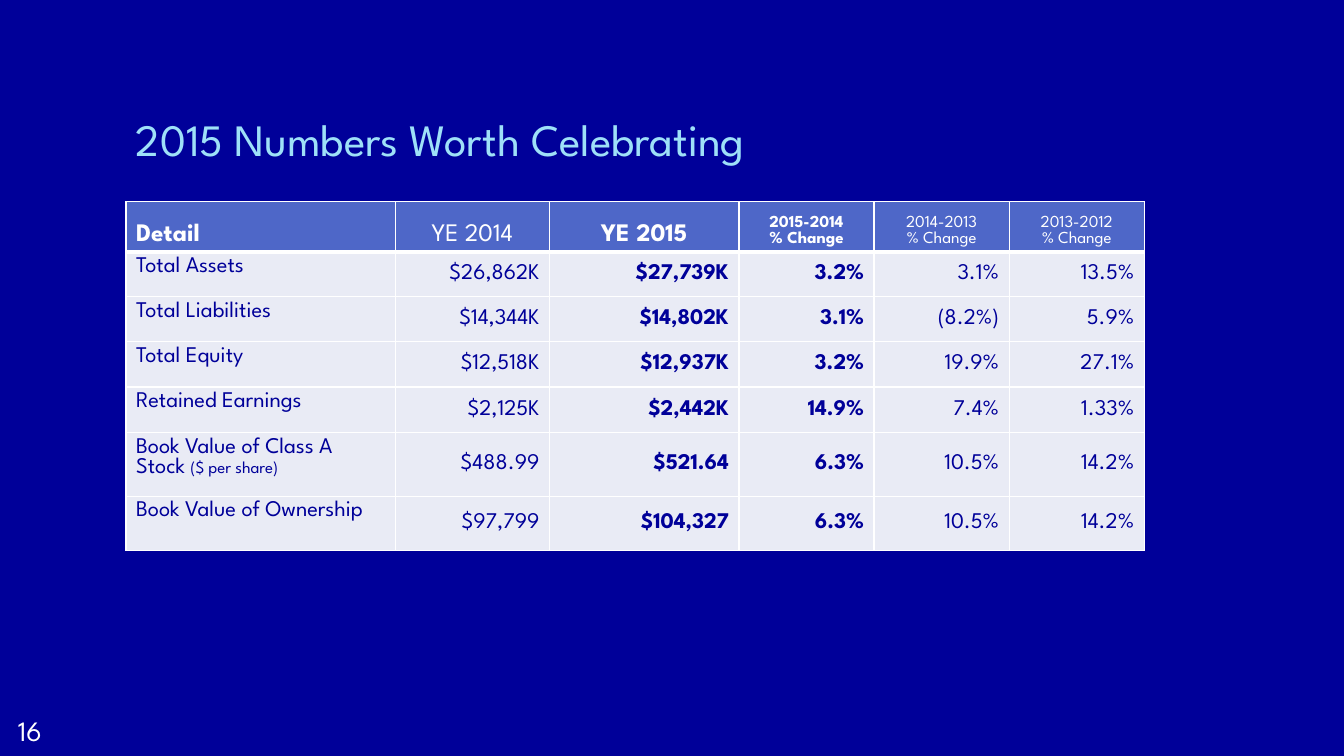
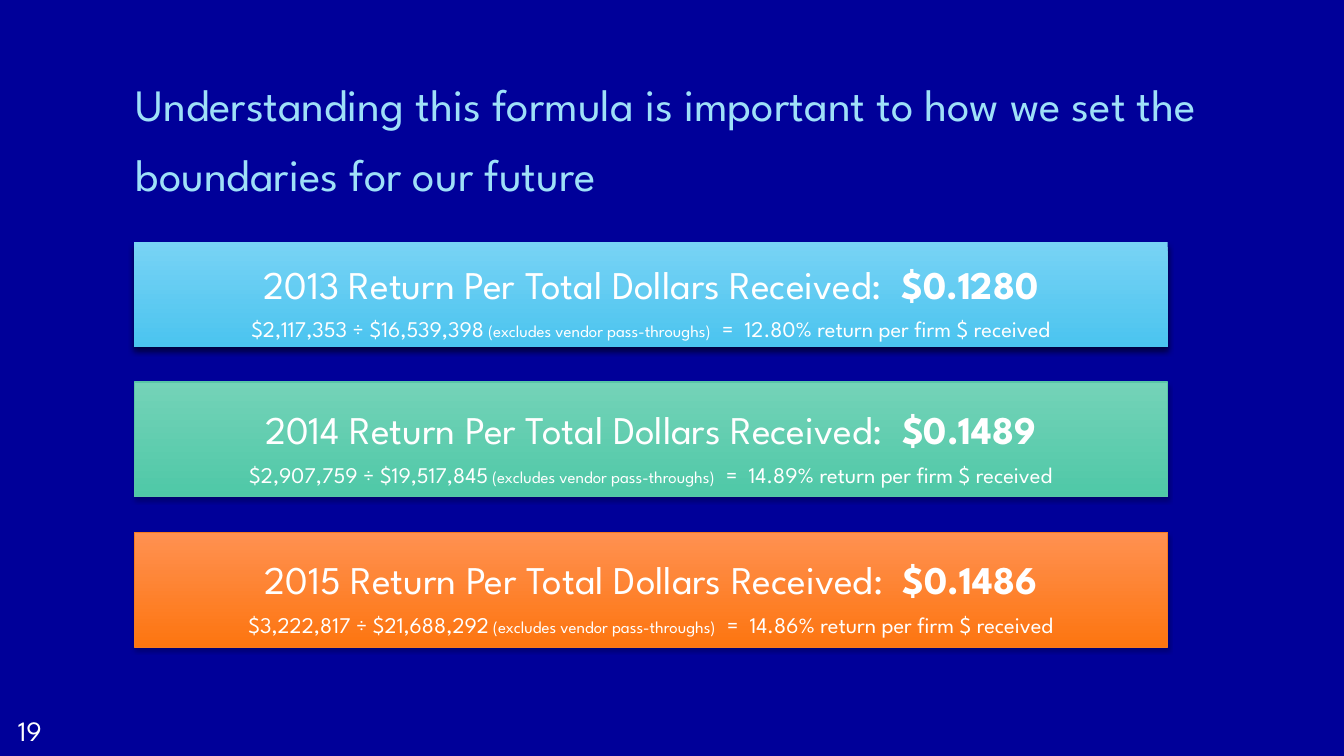
import pptx
import pptx.dml.color
import pptx.enum.shapes
import pptx.enum.text
import pptx.oxml
import pptx.oxml.ns
import pptx.util
from pptx.util import Inches

FONT = "League Spartan"
COLORS = {
    "background": "000099",
    "title": "9EE0F8",
    "number": "FEFFFF",
    "white": "FFFFFF",
    "header": "4E67C8",
    "body": "E9EBF5",
    "ink": "000099",
}
ALIGN = pptx.enum.text.PP_ALIGN
ANCHOR = pptx.enum.text.MSO_ANCHOR
LINE_SPACING = 1.3

TABLE_BOX = (1.25, 2, 10.08, 3.55)
COLUMN_WIDTHS = [2.67, 1.53, 1.88, 1.34, 1.34, 1.34]
ROW_HEIGHTS = [0.48, 0.44, 0.45, 0.45, 0.45, 0.61, 0.54]
BOLD_COLUMNS = {2, 3}
HEADERS = [
    (["Detail"], 18), (["YE 2014"], 18), (["YE 2015"], 18),
    (["2015-2014", "% Change"], 12),
    (["2014-2013", "% Change"], 12),
    (["2013-2012", "% Change"], 12),
]
RESULTS = [
    ["Total Assets", "$26,862K", "$27,739K", "3.2%", "3.1%", "13.5%"],
    ["Total Liabilities", "$14,344K", "$14,802K", "3.1%", "(8.2%)", "5.9%"],
    ["Total Equity", "$12,518K", "$12,937K", "3.2%", "19.9%", "27.1%"],
    ["Retained Earnings", "$2,125K", "$2,442K", "14.9%", "7.4%", "1.33%"],
    ["Book Value of Class A Stock ", "$488.99", "$521.64", "6.3%", "10.5%", "14.2%"],
    ["Book Value of Ownership", "$97,799", "$104,327", "6.3%", "10.5%", "14.2%"],
]
CELL_NOTES = {"Book Value of Class A Stock ": "($ per share)"}

BANDS_BOX = (1.33, 2.4, 10.25)
BAND_GAP = 0.35
SOFT_SHADOW = {"opacity": 25, "blur": 3, "distance": 2}
BANDS = [
    {"year": "2013", "height": 1.04, "amount": "$0.1280", "rate": "12.80%",
     "division": "$2,117,353 ÷ $16,539,398", "gradient": ("78D3F5", "4BC4EF"),
     "outline": None, "shadow": {"opacity": 60, "blur": 4, "distance": 3}},
    {"year": "2014", "height": 1.14, "amount": "$0.1489", "rate": "14.89%",
     "division": "$2,907,759 ÷ $19,517,845", "gradient": ("74D3B8", "4FC8A7"),
     "outline": "59C5A7", "shadow": SOFT_SHADOW},
    {"year": "2015", "height": 1.14, "amount": "$0.1486", "rate": "14.86%",
     "division": "$3,222,817 ÷ $21,688,292", "gradient": ("FF9151", "FD7510"),
     "outline": "F47A20", "shadow": SOFT_SHADOW},
]


def rgb(value):
    return pptx.dml.color.RGBColor.from_string(value)


def set_attributes(target, values):
    for name, value in values.items():
        setattr(target, name, value)


def add_span(para, text, size, color, bold=False):
    span = para.add_run()
    span.text = text
    set_attributes(span.font, {"name": FONT, "size": pptx.util.Pt(size), "bold": bold})
    span.font.color.rgb = rgb(COLORS[color])
    return span


def add_wide_space(para, size):
    """Add one space, tracked out to the width of two."""
    span = add_span(para, " ", size, "white")
    span.font._element.set("spc", str(size * 25))


def add_text(page, box, text, size, color):
    frame = page.shapes.add_textbox(*map(Inches, box)).text_frame
    set_attributes(frame, {"word_wrap": True, "vertical_anchor": ANCHOR.MIDDLE})
    para = frame.paragraphs[0]
    para.line_spacing = LINE_SPACING
    add_span(para, text, size, color)


def add_page(deck, title, number):
    page = deck.slides.add_slide(deck.slide_layouts[6])
    page.background.fill.solid()
    page.background.fill.fore_color.rgb = rgb(COLORS["background"])
    add_text(page, (1.25, 0.68, 11.34, 1.23), title, 32, "title")
    add_text(page, (0.08, 7, 0.85, 0.4), number, 20, "number")
    return page


def style_cell(cell, fill, anchor, top=1, bottom=1):
    """Set the anchor, the white borders (widths in points) and the fill."""
    cell.vertical_anchor = anchor
    properties = cell._tc.get_or_add_tcPr()
    for side, width in {"L": 1, "R": 1, "T": top, "B": bottom}.items():
        properties.append(pptx.oxml.parse_xml(
            f'<a:ln{side} {pptx.oxml.ns.nsdecls("a")} w="{pptx.util.Pt(width)}">'
            f'<a:solidFill><a:srgbClr val="{COLORS["white"]}"/></a:solidFill>'
            f'</a:ln{side}>'))
    cell.fill.solid()
    cell.fill.fore_color.rgb = rgb(COLORS[fill])


def fill_header_cell(cell, column, lines, size):
    style_cell(cell, "header", ANCHOR.BOTTOM, bottom=3)
    para = cell.text_frame.paragraphs[0]
    para.alignment = ALIGN.CENTER if column else ALIGN.LEFT
    for index, line in enumerate(lines):
        if index:
            para.add_line_break()
        add_span(para, line, size, "white", column == 0 or column in BOLD_COLUMNS)


def fill_result_cell(cell, row, column, text):
    style_cell(cell, "body", ANCHOR.MIDDLE if column else ANCHOR.TOP,
               top=3 if row == 1 else 1)
    para = cell.text_frame.paragraphs[0]
    para.alignment = ALIGN.RIGHT if column else ALIGN.LEFT
    add_span(para, text, 16, "ink", column in BOLD_COLUMNS)
    if text in CELL_NOTES:
        add_span(para, CELL_NOTES[text], 12, "ink")


def add_results_table(page, box):
    table = page.shapes.add_table(
        len(ROW_HEIGHTS), len(COLUMN_WIDTHS), *map(Inches, box)).table
    for column, width in zip(table.columns, COLUMN_WIDTHS):
        column.width = Inches(width)
    for row, height in zip(table.rows, ROW_HEIGHTS):
        row.height = Inches(height)
    for column, (lines, size) in enumerate(HEADERS):
        fill_header_cell(table.cell(0, column), column, lines, size)
    for row, values in enumerate(RESULTS, 1):
        for column, text in enumerate(values):
            fill_result_cell(table.cell(row, column), row, column, text)


def add_shadow(shape, opacity, blur, distance):
    """Cast a black shadow straight down; lengths are in points."""
    shape.shadow.inherit = False
    effects = shape._element.spPr.find(pptx.oxml.ns.qn("a:effectLst"))
    effects.append(pptx.oxml.parse_xml(
        f'<a:outerShdw {pptx.oxml.ns.nsdecls("a")} blurRad="{pptx.util.Pt(blur)}" '
        f'dist="{pptx.util.Pt(distance)}" dir="5400000" rotWithShape="0">'
        f'<a:srgbClr val="000000"><a:alpha val="{opacity * 1000}"/></a:srgbClr>'
        '</a:outerShdw>'))


def add_band(page, box, band):
    shape = page.shapes.add_shape(
        pptx.enum.shapes.MSO_SHAPE.RECTANGLE, *map(Inches, box))
    shape.fill.gradient()
    shape.fill.gradient_angle = 270
    for stop, position, color in zip(shape.fill.gradient_stops, (0, 1), band["gradient"]):
        stop.position = position
        stop.color.rgb = rgb(color)
    if band["outline"]:
        shape.line.color.rgb = rgb(band["outline"])
        shape.line.width = pptx.util.Pt(0.75)
    else:
        shape.line.fill.background()
    add_shadow(shape, **band["shadow"])

    frame = shape.text_frame
    set_attributes(frame, {"word_wrap": True, "vertical_anchor": ANCHOR.MIDDLE})
    set_attributes(frame, {f"margin_{side}": Inches(0.2)
                           for side in ("left", "top", "right", "bottom")})
    headline, formula = frame.paragraphs[0], frame.add_paragraph()
    for para in (headline, formula):
        set_attributes(para, {"alignment": ALIGN.CENTER, "line_spacing": LINE_SPACING})
    add_span(headline, f"{band['year']} Return Per Total Dollars Received:", 28, "white")
    add_wide_space(headline, 28)
    add_span(headline, band["amount"], 28, "white", True)
    add_span(formula, band["division"], 16, "white")
    add_span(formula, " ", 11, "white")
    add_span(formula, "(excludes vendor pass-throughs)", 12, "white")
    add_wide_space(formula, 16)
    add_span(formula, "=", 16, "white")
    add_wide_space(formula, 16)
    add_span(formula, f"{band['rate']} return per firm $ received", 16, "white")


def add_bands(page, box):
    left, top, width = box
    for band in BANDS:
        add_band(page, (left, top, width, band["height"]), band)
        top += band["height"] + BAND_GAP


def main():
    deck = pptx.Presentation()
    set_attributes(deck, {"slide_width": Inches(13.33), "slide_height": Inches(7.5)})
    add_results_table(add_page(deck, "2015 Numbers Worth Celebrating", "16"), TABLE_BOX)
    add_bands(add_page(
        deck, "Understanding this formula is important to how we set the "
        "boundaries for our future", "19"), BANDS_BOX)
    deck.save("out.pptx")


if __name__ == "__main__":
    main()
